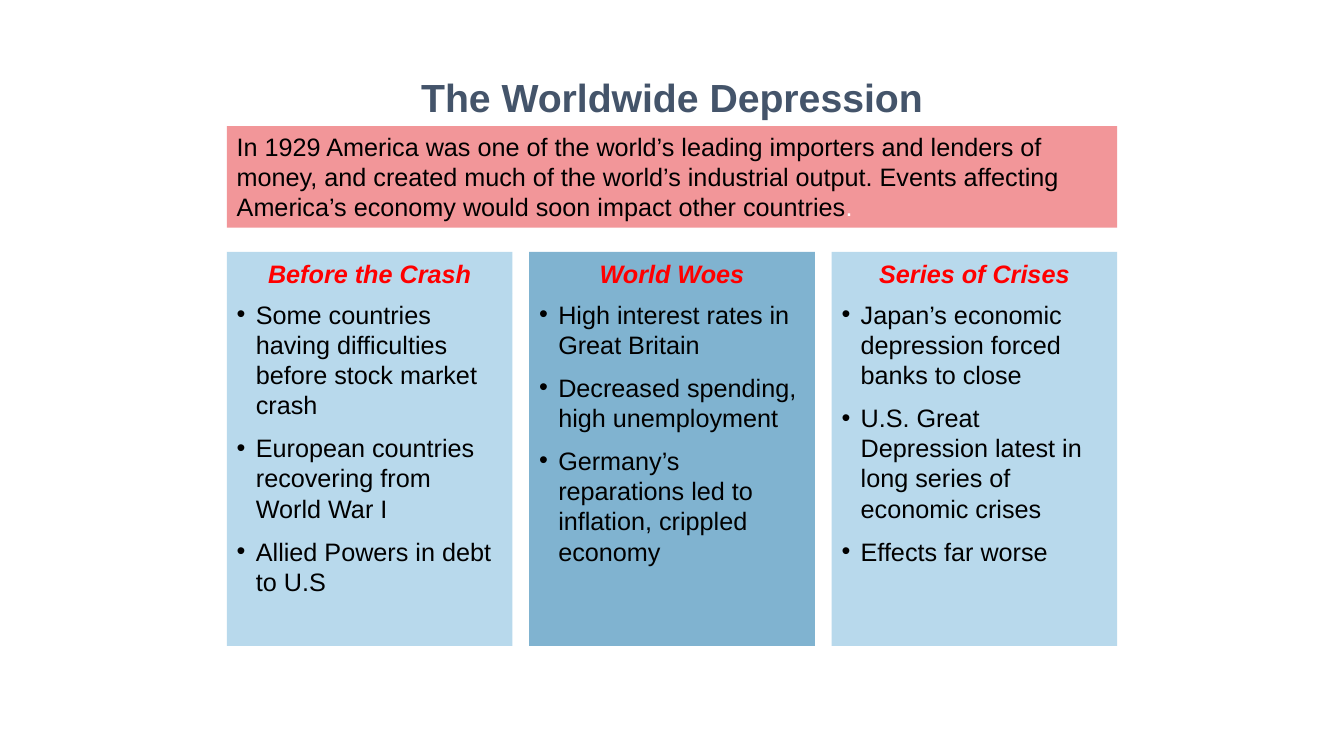
from dataclasses import dataclass

from lxml.etree import SubElement
from pptx import Presentation
from pptx.dml.color import RGBColor
from pptx.enum.shapes import MSO_SHAPE
from pptx.enum.text import MSO_ANCHOR, MSO_AUTO_SIZE, PP_ALIGN
from pptx.oxml.ns import qn
from pptx.util import Inches, Pt


@dataclass(frozen=True)
class Theme:
    font: str = "Arial"
    title_size: int = 28
    text_size: int = 18
    paragraph_gap: int = 9
    title: str = "44546A"
    text: str = "000000"
    heading: str = "FF0000"
    light_text: str = "FFFFFF"
    intro_fill: str = "F29699"
    light_column: str = "B8D9EC"
    dark_column: str = "80B3D0"


THEME = Theme()

# The slide is a grid of 160 columns by 90 rows, twelve to the inch
GRID_COLUMNS, GRID_ROWS = 160, 90
UNIT = Inches(1 / 12)
BULLET_INDENT = Inches(0.19)

# Boxes in grid units: left, top, width, height
TITLE_BOX = (28, 8, 104, 7)
INTRO_BOX = (27, 15, 106, 12.1)
COLUMNS_BOX = (27, 30, 106, 46.9)
COLUMN_GAP = 2
HEADING_ROWS = 5

TITLE = "The Worldwide Depression"
INTRO = (
    "In 1929 America was one of the world’s leading importers and lenders of money, "
    "and created much of the world’s industrial output. Events affecting America’s "
    "economy would soon impact other countries"
)
COLUMNS = [
    ("Before the Crash", THEME.light_column, [
        "Some countries having difficulties before stock market crash",
        "European countries recovering from World War I",
        "Allied Powers in debt to U.S",
    ]),
    ("World Woes", THEME.dark_column, [
        "High interest rates in Great Britain",
        "Decreased spending, high unemployment",
        "Germany’s reparations led to inflation, crippled economy",
    ]),
    ("Series of Crises", THEME.light_column, [
        "Japan’s economic depression forced banks to close",
        "U.S. Great Depression latest in long series of economic crises",
        "Effects far worse",
    ]),
]


def to_lengths(box):
    return [round(value * UNIT) for value in box]


def add_text(paragraph, text, *, size=THEME.text_size, color=THEME.text,
             bold=False, italic=False, align=PP_ALIGN.LEFT, gap=0):
    paragraph.alignment = align
    paragraph.space_after = Pt(gap)
    run = paragraph.add_run()
    run.text = text
    run.font.name = THEME.font
    run.font.size = Pt(size)
    run.font.bold = bold
    run.font.italic = italic
    run.font.color.rgb = RGBColor.from_string(color)


def add_bullet(paragraph):
    properties = paragraph._p.get_or_add_pPr()
    properties.set("marL", str(BULLET_INDENT))
    properties.set("indent", str(-BULLET_INDENT))
    SubElement(properties, qn("a:buFont"), typeface=THEME.font)
    SubElement(properties, qn("a:buChar"), char="•")


def add_panel(shapes, box, fill, anchor=MSO_ANCHOR.TOP):
    panel = shapes.add_shape(MSO_SHAPE.RECTANGLE, *to_lengths(box))
    panel.shadow.inherit = False
    panel.fill.solid()
    panel.fill.fore_color.rgb = RGBColor.from_string(fill)
    panel.line.fill.background()
    panel.text_frame.word_wrap = True
    panel.text_frame.vertical_anchor = anchor
    return panel


def add_title(slide, box):
    title = slide.shapes.title
    title.left, title.top, title.width, title.height = to_lengths(box)
    frame = title.text_frame
    frame.auto_size = MSO_AUTO_SIZE.NONE
    frame.vertical_anchor = MSO_ANCHOR.MIDDLE
    add_text(frame.paragraphs[0], TITLE, size=THEME.title_size,
             color=THEME.title, bold=True, align=PP_ALIGN.CENTER)


def add_intro(slide, box):
    frame = add_panel(slide.shapes, box, THEME.intro_fill).text_frame
    frame.auto_size = MSO_AUTO_SIZE.SHAPE_TO_FIT_TEXT
    add_text(frame.paragraphs[0], INTRO)
    add_text(frame.paragraphs[0], ".", color=THEME.light_text)


def add_column(slide, box, heading, fill, points):
    left, top, width, height = box
    shapes = slide.shapes.add_group_shape().shapes

    # Bulleted list
    list_box = (left, top + HEADING_ROWS, width, height - HEADING_ROWS)
    frame = add_panel(shapes, list_box, fill).text_frame
    for index, point in enumerate(points):
        paragraph = frame.add_paragraph() if index else frame.paragraphs[0]
        add_text(paragraph, point, gap=THEME.paragraph_gap)
        add_bullet(paragraph)

    # Heading band
    heading_box = (left, top, width, HEADING_ROWS)
    band = add_panel(shapes, heading_box, fill, MSO_ANCHOR.MIDDLE)
    add_text(band.text_frame.paragraphs[0], heading, color=THEME.heading,
             bold=True, italic=True, align=PP_ALIGN.CENTER)


def add_columns(slide, box):
    left, top, width, height = box
    column_width = (width - COLUMN_GAP * (len(COLUMNS) - 1)) / len(COLUMNS)
    for index, (heading, fill, points) in enumerate(COLUMNS):
        column_left = left + index * (column_width + COLUMN_GAP)
        add_column(slide, (column_left, top, column_width, height),
                   heading, fill, points)


def main():
    presentation = Presentation()
    presentation.slide_width = GRID_COLUMNS * UNIT
    presentation.slide_height = GRID_ROWS * UNIT
    title_only = presentation.slide_layouts.get_by_name("Title Only")
    slide = presentation.slides.add_slide(title_only)
    add_title(slide, TITLE_BOX)
    add_intro(slide, INTRO_BOX)
    add_columns(slide, COLUMNS_BOX)
    presentation.save("out.pptx")


if __name__ == "__main__":
    main()
